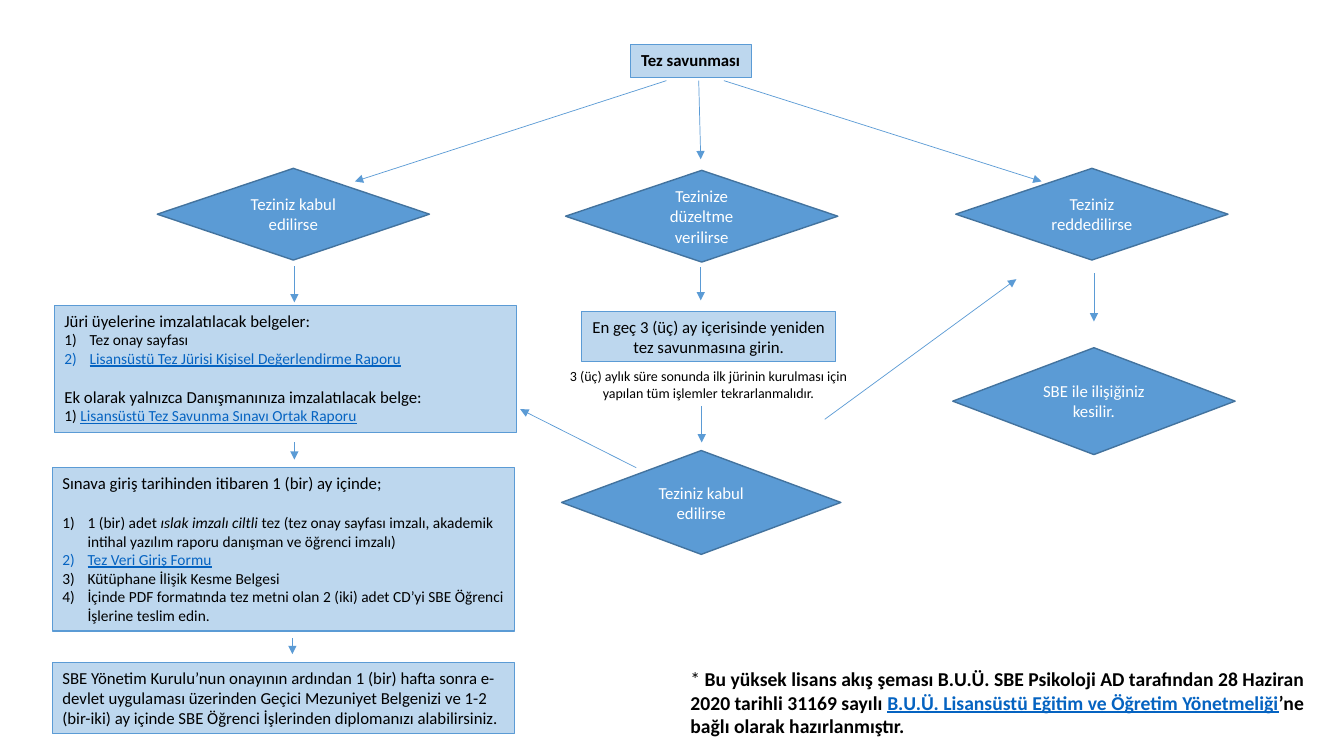
import pptx
import pptx.dml.color
import pptx.enum.shapes
import pptx.enum.text
import pptx.oxml
import pptx.oxml.ns
import pptx.util

PX = 9144
BLUE, EDGE, PALE = "5B9BD5", "43739E", "BDD7EE"
BLACK, WHITE, LINK = "000000", "FFFFFF", "0563C1"
SHAPES = pptx.enum.shapes.MSO_SHAPE
CENTER = pptx.enum.text.PP_ALIGN.CENTER
LEFT = pptx.enum.text.PP_ALIGN.LEFT
TOP = pptx.enum.text.MSO_ANCHOR.TOP
MIDDLE = pptx.enum.text.MSO_ANCHOR.MIDDLE


def px(*lengths):
    """Turn px lengths into EMU."""
    return [pptx.util.Emu(length * PX) for length in lengths]


def rgb(code):
    """Turn a hex string into a colour."""
    return pptx.dml.color.RGBColor.from_string(code)


def add_child(parent, tag, **attributes):
    """Append one DrawingML element to a parent."""
    child = pptx.oxml.ns.qn(tag)
    parent.append(parent.makeelement(child, attributes))


def style_font(font, color, style):
    """Apply a colour and a set of style words to a font."""
    words = style.split()
    font.color.rgb = rgb(LINK if "link" in words else color)
    if "link" in words:
        font.underline = True
    if "bold" in words:
        font.bold = True
    if "italic" in words:
        font.italic = True


def line(*spans, size=12, numbered=False, before=0):
    """Describe one paragraph made of (text, style) spans."""
    return spans, size, numbered, before


def write(box, lines, color=BLACK, align=LEFT, anchor=TOP, wrap=True):
    """Fill a shape with the described paragraphs."""
    frame = box.text_frame
    frame.word_wrap = wrap
    frame.vertical_anchor = anchor
    for index, (spans, size, numbered, before) in enumerate(lines):
        para = frame.paragraphs[0] if index == 0 else frame.add_paragraph()
        para.alignment = align
        if before:
            para.space_before = pptx.util.Pt(before)
        if numbered:
            properties = para._p.get_or_add_pPr()
            properties.set("marL", "228600")
            properties.set("indent", "-228600")
            add_child(properties, "a:buFont", typeface="+mj-lt")
            add_child(properties, "a:buAutoNum", type="arabicParenR")
        para.font.name = "Calibri"
        para.font.size = pptx.util.Pt(size)
        if len(spans) == 1:
            style_font(para.font, color, spans[0][1])
        for text, style in spans:
            span = para.add_run()
            span.text = text
            if len(spans) > 1:
                style_font(span.font, color, style)


def add_block(page, kind, place, fill, edge, width):
    """Add a filled and outlined shape without shadow."""
    box = page.shapes.add_shape(kind, *px(*place))
    box.shadow.inherit = False
    box.fill.solid()
    box.fill.fore_color.rgb = rgb(fill)
    box.line.color.rgb = rgb(edge)
    box.line.width = pptx.util.Pt(width)
    return box


def add_panel(page, place, lines, align=LEFT, wrap=True):
    """Add a pale rectangle with dark text."""
    box = add_block(page, SHAPES.RECTANGLE, place, PALE, BLUE, 0.75)
    write(box, lines, align=align, wrap=wrap)


def add_decision(page, place, text):
    """Add a blue decision diamond with white text."""
    box = add_block(page, SHAPES.FLOWCHART_DECISION, place, BLUE, EDGE, 1)
    write(box, [line((text, ""))], WHITE, CENTER, MIDDLE)


def add_note(page, place, lines, align=LEFT):
    """Add a plain text box."""
    write(page.shapes.add_textbox(*px(*place)), lines, align=align)


def add_arrow(page, ends):
    """Add a thin arrow between two points."""
    straight = pptx.enum.shapes.MSO_CONNECTOR.STRAIGHT
    arrow = page.shapes.add_connector(straight, *px(*ends))
    arrow.line.color.rgb = rgb(BLUE)
    arrow.line.width = pptx.util.Pt(0.5)
    add_child(arrow.line._get_or_add_ln(), "a:tailEnd", type="triangle")
    add_child(arrow._element.spPr, "a:effectLst")


def main():
    """Build the thesis defence flow chart."""
    deck = pptx.Presentation()
    deck.slide_width, deck.slide_height = px(1333, 750)
    page = deck.slides.add_slide(deck.slide_layouts[6])

    add_panel(page, (625, 44, 120, 33), [line(("Tez savunması", "bold"))], CENTER, False)
    for place, text in [
        ((156, 167, 270, 91), "Teziniz kabul edilirse"),
        ((561, 169, 270, 91), "Tezinize düzeltme verilirse"),
        ((948, 167, 270, 91), "Teziniz reddedilirse"),
        ((557, 447, 277, 103), "Teziniz kabul edilirse"),
        ((945, 345, 280, 106), "SBE ile ilişiğiniz kesilir."),
    ]:
        add_decision(page, place, text)

    add_panel(page, (54, 303, 458, 126), [
        line(("Jüri üyelerine imzalatılacak belgeler:", "")),
        line(("Tez onay sayfası", ""), size=11, numbered=True),
        line(("Lisansüstü Tez Jürisi Kişisel Değerlendirme Raporu", "link"),
             size=11, numbered=True),
        line(("Ek olarak yalnızca Danışmanınıza imzalatılacak belge:", ""), before=13.4),
        line(("1) ", ""), ("Lisansüstü Tez Savunma Sınavı Ortak Raporu", "link"), size=11),
    ])
    add_panel(page, (577, 309, 252, 50), [
        line(("En geç 3 (üç) ay içerisinde yeniden tez savunmasına girin.", "")),
    ], CENTER)
    add_panel(page, (52, 464, 458, 162), [
        line(("Sınava giriş tarihinden itibaren 1 (bir) ay içinde;", "")),
        line(("1 (bir) adet ", ""), ("ıslak imzalı ciltli", "italic"),
             (" tez (tez onay sayfası imzalı, akademik intihal yazılım raporu "
              "danışman ve öğrenci imzalı)", ""),
             size=11, numbered=True, before=14.6),
        line(("Tez Veri Giriş Formu", "link"), size=11, numbered=True),
        line(("Kütüphane İlişik Kesme Belgesi", ""), size=11, numbered=True),
        line(("İçinde PDF formatında tez metni olan 2 (iki) adet CD’yi "
              "SBE Öğrenci İşlerine teslim edin.", ""), size=11, numbered=True),
    ])
    add_panel(page, (52, 657, 458, 71), [
        line(("SBE Yönetim Kurulu’nun onayının ardından 1 (bir) hafta sonra "
              "e-devlet uygulaması üzerinden Geçici Mezuniyet Belgenizi ve 1-2 "
              "(bir-iki) ay içinde SBE Öğrenci İşlerinden diplomanızı "
              "alabilirsiniz.", "")),
    ])

    for ends in [
        (661, 80, 352, 180), (693, 80, 695, 158), (718, 80, 1033, 180),
        (292, 264, 292, 300), (695, 265, 695, 298), (1085, 271, 1085, 319),
        (696, 403, 696, 439), (631, 464, 516, 406), (818, 416, 1008, 277),
        (292, 439, 292, 456), (290, 633, 290, 649),
    ]:
        add_arrow(page, ends)

    add_note(page, (547, 360, 311, 44), [
        line(("3 (üç) aylık süre sonunda ilk jürinin kurulması için yapılan "
              "tüm işlemler tekrarlanmalıdır.", ""), size=10),
    ], CENTER)
    add_note(page, (675, 657, 667, 81), [
        line(("* ", ""),
             ("Bu yüksek lisans akış şeması B.U.Ü. SBE Psikoloji AD tarafından "
              "28 Haziran 2020 tarihli 31169 sayılı ", "bold"),
             ("B.U.Ü. Lisansüstü Eğitim ve Öğretim Yönetmeliği", "bold link"),
             ("’ne bağlı olarak hazırlanmıştır.", "bold"), size=14),
    ])
    deck.save("out.pptx")


if __name__ == "__main__":
    main()
